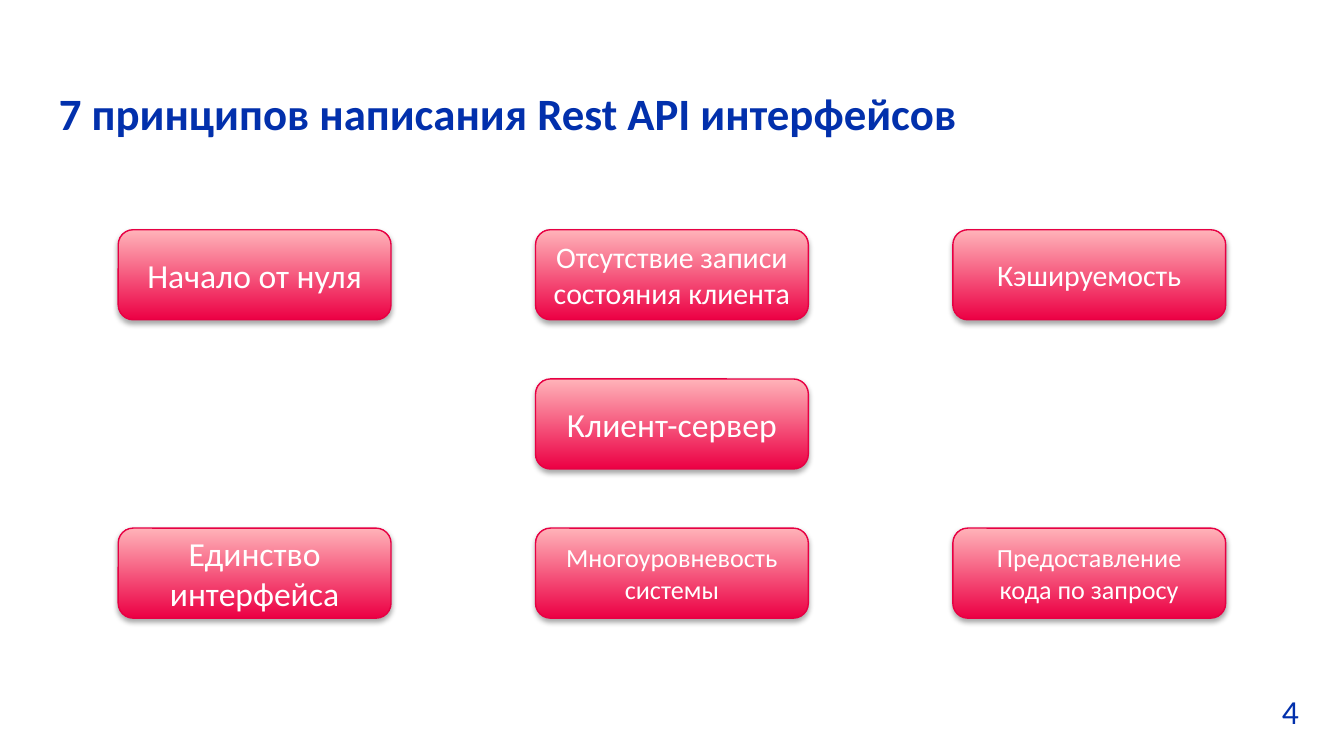
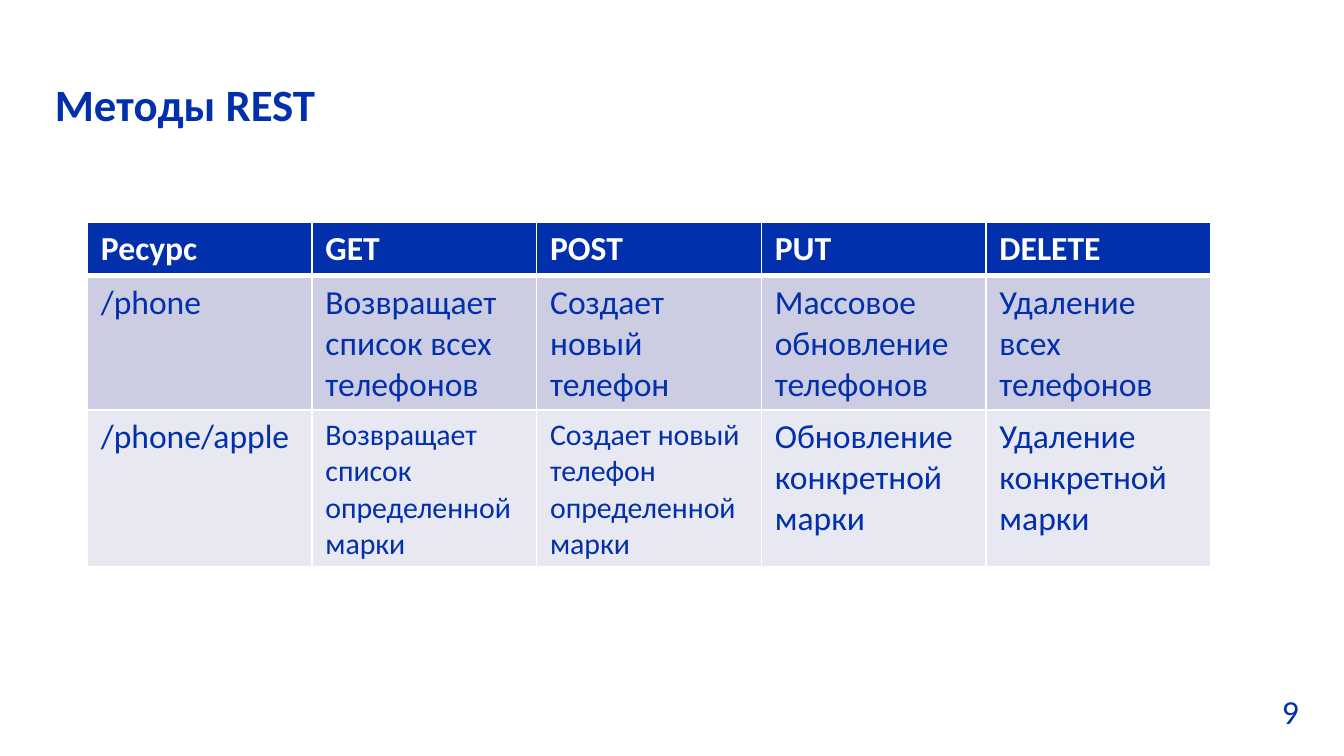
from lxml.etree import SubElement as Sub
from pptx import Presentation
from pptx.dml.color import RGBColor
from pptx.enum.shapes import MSO_SHAPE as Shape
from pptx.enum.text import MSO_ANCHOR as Anchor, PP_ALIGN as Align
from pptx.oxml.ns import qn
from pptx.util import Inches, Pt

BLUE, WHITE = "0230AC", "FFFFFF"
ROSE, PINK, EDGE = "EC0044", "FFB3B9", "E70043"
BANDS = [BLUE, "CCCDE3", "E7E8F1"]


def color(code):
    return RGBColor.from_string(code)


def write(frame, text, size, code, bold=False, align=None):
    frame.word_wrap = True
    para = frame.paragraphs[0]
    para.text = text
    para.alignment = align
    font = para.font
    font.name, font.size, font.bold = "Calibri", Pt(size), bold
    font.color.rgb = color(code)


# Wide 16:9 page
deck = Presentation()
deck.slide_width, deck.slide_height = Inches(10), Inches(10 * 9 / 16)

# Titles and page numbers
heads = [
    ("7 принципов написания Rest API интерфейсов", 0.34, 0.59, "4"),
    ("Методы REST", 0.31, 0.52, "9"),
]
pages = []
for title, left, top, number in heads:
    page = deck.slides.add_slide(deck.slide_layouts[6])
    box = page.shapes.add_textbox(Inches(left), Inches(top), Inches(7.46), Inches(0.5))
    write(box.text_frame, title, 24, BLUE, bold=True)
    box = page.shapes.add_textbox(Inches(9.44), Inches(5.09), Inches(0.27), Inches(0.4))
    write(box.text_frame, number, 18, BLUE)
    pages.append(page)
rules, methods = pages

# Seven principles: column, row, text, size
cards = [
    (1, 1, "Клиент-сервер", 18),
    (1, 0, "Отсутствие записи состояния клиента", 16),
    (2, 0, "Кэшируемость", 16),
    (0, 2, "Единство интерфейса", 18),
    (1, 2, "Многоуровневость системы", 14),
    (2, 2, "Предоставление кода по запросу", 14),
    (0, 0, "Начало от нуля", 18),
]
for col, row, text, size in cards:
    card = rules.shapes.add_shape(
        Shape.ROUNDED_RECTANGLE, Inches(0.88 + 6.21 * col / 2),
        Inches(1.71 + 1.11 * row), Inches(2.03), Inches(0.67))
    card.fill.gradient()
    card.fill.gradient_angle = 90
    for stop, code in zip(card.fill.gradient_stops, (ROSE, PINK)):
        stop.color.rgb = color(code)
    card.line.color.rgb = color(EDGE)
    card.line.width = Pt(0.75)
    # Soft shadow below the card
    card.shadow.inherit = False
    effects = card._element.spPr.find(qn("a:effectLst"))
    shade = Sub(effects, qn("a:outerShdw"), blurRad=str(Pt(3.1)), dist=str(Pt(1.8)),
                dir="5400000", rotWithShape="0")
    tone = Sub(shade, qn("a:srgbClr"), val="000000")
    Sub(tone, qn("a:alpha"), val="35000")
    card.text_frame.vertical_anchor = Anchor.MIDDLE
    write(card.text_frame, text, size, WHITE, align=Align.CENTER)

# Table of methods
rows = [
    ["Ресурс", "GET", "POST", "PUT", "DELETE"],
    ["/phone", "Возвращает список всех телефонов", "Создает новый телефон",
     "Массовое обновление телефонов", "Удаление всех телефонов"],
    ["/phone/apple", "Возвращает список определенной марки",
     "Создает новый телефон определенной марки",
     "Обновление конкретной марки", "Удаление конкретной марки"],
]
table = methods.shapes.add_table(
    3, 5, Inches(0.65), Inches(1.65), Inches(8.36), Inches(2.57)).table
for row, height in zip(table.rows, (0.4, 1, 1.17)):
    row.height = Inches(height)
for r, texts in enumerate(rows):
    for c, text in enumerate(texts):
        cell = table.cell(r, c)
        head = r == 0
        # White borders, thick along the header's lower edge
        props = cell._tc.get_or_add_tcPr()
        for side in "LRTB":
            thick = (head and side == "B") or (r == 1 and side == "T")
            line = Sub(props, qn("a:ln" + side), w=str(Pt(3 if thick else 1)))
            Sub(Sub(line, qn("a:solidFill")), qn("a:srgbClr"), val=WHITE)
        cell.fill.solid()
        cell.fill.fore_color.rgb = color(BANDS[r])
        size = 16 if r == 2 and c in (1, 2) else 18
        write(cell.text_frame, text, size, WHITE if head else BLUE, bold=head)

deck.save("out.pptx")
